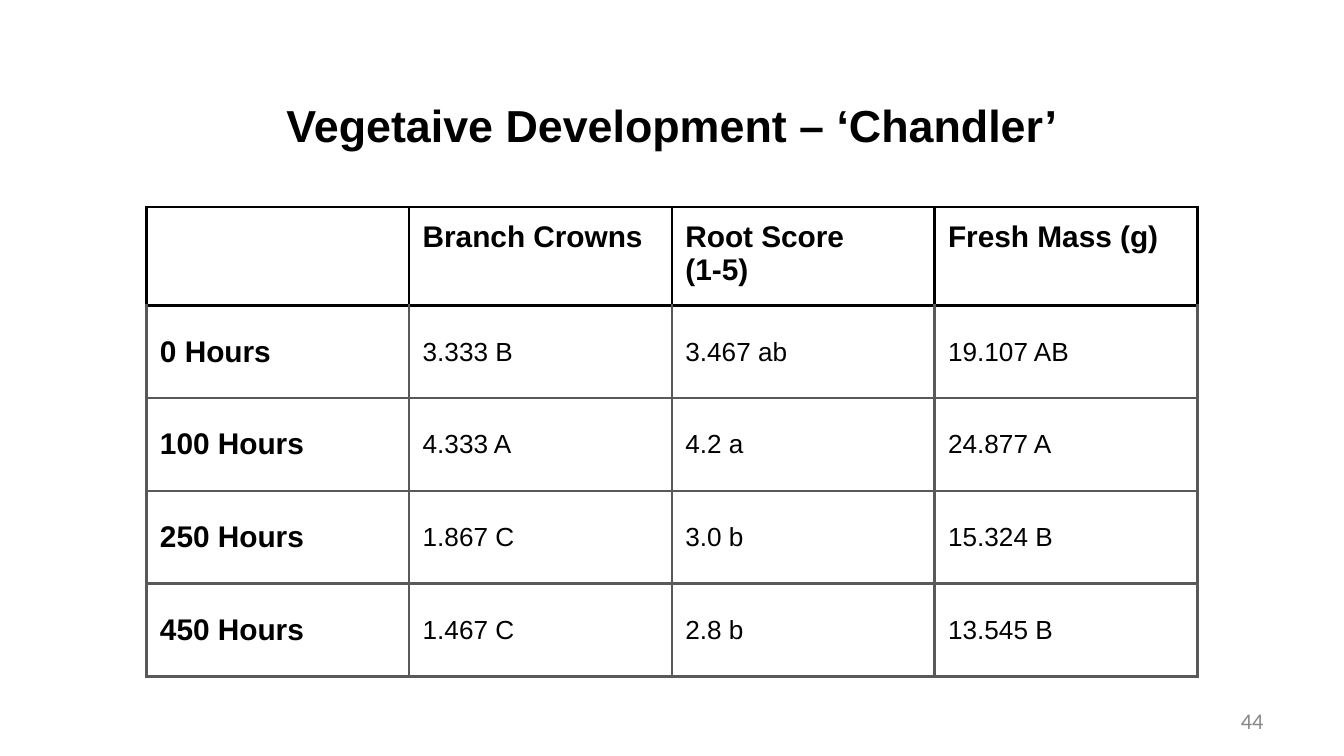
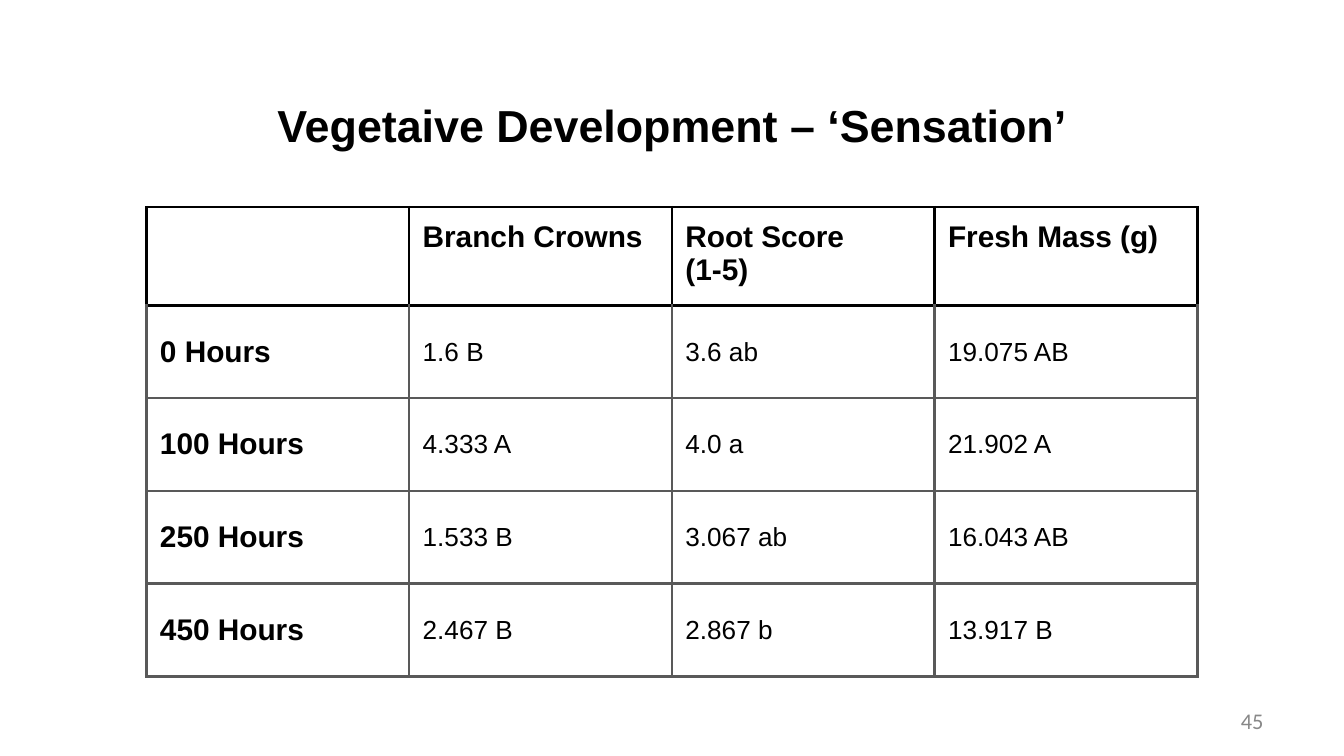
from pptx import Presentation
from pptx.dml.color import RGBColor
from pptx.enum.text import MSO_ANCHOR as Anchor, PP_ALIGN as Align
from pptx.oxml.ns import qn
from pptx.util import Inches, Pt
from lxml.etree import SubElement

BLACK = RGBColor(0x00, 0x00, 0x00)
WHITE = RGBColor(0xFF, 0xFF, 0xFF)
GRID_GRAY = RGBColor(0x59, 0x59, 0x59)
NUMBER_GRAY = RGBColor(0x88, 0x88, 0x88)
BORDER_WIDTH = Pt(1.5)
SLIDE_WIDTH = Inches(10)
TABLE_WIDTH, HEADER_HEIGHT, ROW_HEIGHT = 7.82, 0.72, 0.69

HEADINGS = ["", "Branch Crowns", "Root Score\n(1-5)", "Fresh Mass (g)"]
CULTIVARS = [
    ("Chandler", 44, [
        ["0 Hours", "3.333 B", "3.467 ab", "19.107 AB"],
        ["100 Hours", "4.333 A", "4.2 a", "24.877 A"],
        ["250 Hours", "1.867 C", "3.0 b", "15.324 B"],
        ["450 Hours", "1.467 C", "2.8 b", "13.545 B"],
    ]),
    ("Sensation", 45, [
        ["0 Hours", "1.6 B", "3.6 ab", "19.075 AB"],
        ["100 Hours", "4.333 A", "4.0 a", "21.902 A"],
        ["250 Hours", "1.533 B", "3.067 ab", "16.043 AB"],
        ["450 Hours", "2.467 B", "2.867 b", "13.917 B"],
    ]),
]


def write_text(frame, text, size=16, font="Arial", color=BLACK, bold=False,
               align=Align.LEFT):
    frame.word_wrap = True
    frame.text = text
    for paragraph in frame.paragraphs:
        paragraph.alignment = align
        paragraph.font.size = Pt(size)
        for run in paragraph.runs:
            run.font.size = Pt(size)
            run.font.name = font
            run.font.bold = bold
            run.font.color.rgb = color


class Deck:
    def __init__(self):
        self.presentation = Presentation()
        self.presentation.slide_width = SLIDE_WIDTH
        self.presentation.slide_height = SLIDE_WIDTH * 9 // 16
        self.slide = None

    def add_slide(self):
        self.slide = self.presentation.slides.add_slide(
            self.presentation.slide_layouts[6])
        background = self.slide.background.fill
        background.solid()
        background.fore_color.rgb = WHITE

    def text(self, text, left, top, width, height, **style):
        box = self.slide.shapes.add_textbox(
            Inches(left), Inches(top), Inches(width), Inches(height))
        box.text_frame.vertical_anchor = Anchor.MIDDLE
        write_text(box.text_frame, text, **style)

    def title(self, text):
        self.text(text, 0.5, 0.49, 9, 0.88, size=24, bold=True,
                  align=Align.CENTER)

    def page_number(self, number):
        self.text(str(number), 7.17, 5.21, 2.33, 0.3, size=12, font="Calibri",
                  color=NUMBER_GRAY, align=Align.RIGHT)

    def border(self, cell, side, color):
        properties = cell._tc.get_or_add_tcPr()
        line = SubElement(properties, qn(f"a:ln{side}"), w=str(BORDER_WIDTH))
        fill = SubElement(line, qn("a:solidFill"))
        SubElement(fill, qn("a:srgbClr"), val=str(color))

    def cell(self, cell, text, row, column):
        is_header = row == 0
        is_label = is_header or column == 0
        cell.margin_left = cell.margin_right = Inches(0.1)
        cell.margin_top = cell.margin_bottom = Inches(0.1)
        cell.vertical_anchor = Anchor.TOP if is_header else Anchor.MIDDLE
        for side in "LRTB":
            is_black = is_header or (row == 1 and side == "T")
            self.border(cell, side, BLACK if is_black else GRID_GRAY)
        cell.fill.background()
        write_text(cell.text_frame, text, size=16 if is_label else 14,
                   bold=is_label)

    def table(self, rows, left, top):
        heights = [HEADER_HEIGHT] + [ROW_HEIGHT] * (len(rows) - 1)
        grid = self.slide.shapes.add_table(
            len(rows), len(rows[0]), Inches(left), Inches(top),
            Inches(TABLE_WIDTH), Inches(sum(heights))).table
        grid.horz_banding = False
        for row, (values, height) in enumerate(zip(rows, heights)):
            grid.rows[row].height = Inches(height)
            for column, value in enumerate(values):
                self.cell(grid.cell(row, column), value, row, column)


def main():
    deck = Deck()
    for cultivar, number, measurements in CULTIVARS:
        deck.add_slide()
        deck.title(f"Vegetaive Development – ‘{cultivar}’")
        deck.page_number(number)
        deck.table([HEADINGS] + measurements, 1.09, 1.54)
    deck.presentation.save("out.pptx")


if __name__ == "__main__":
    main()
